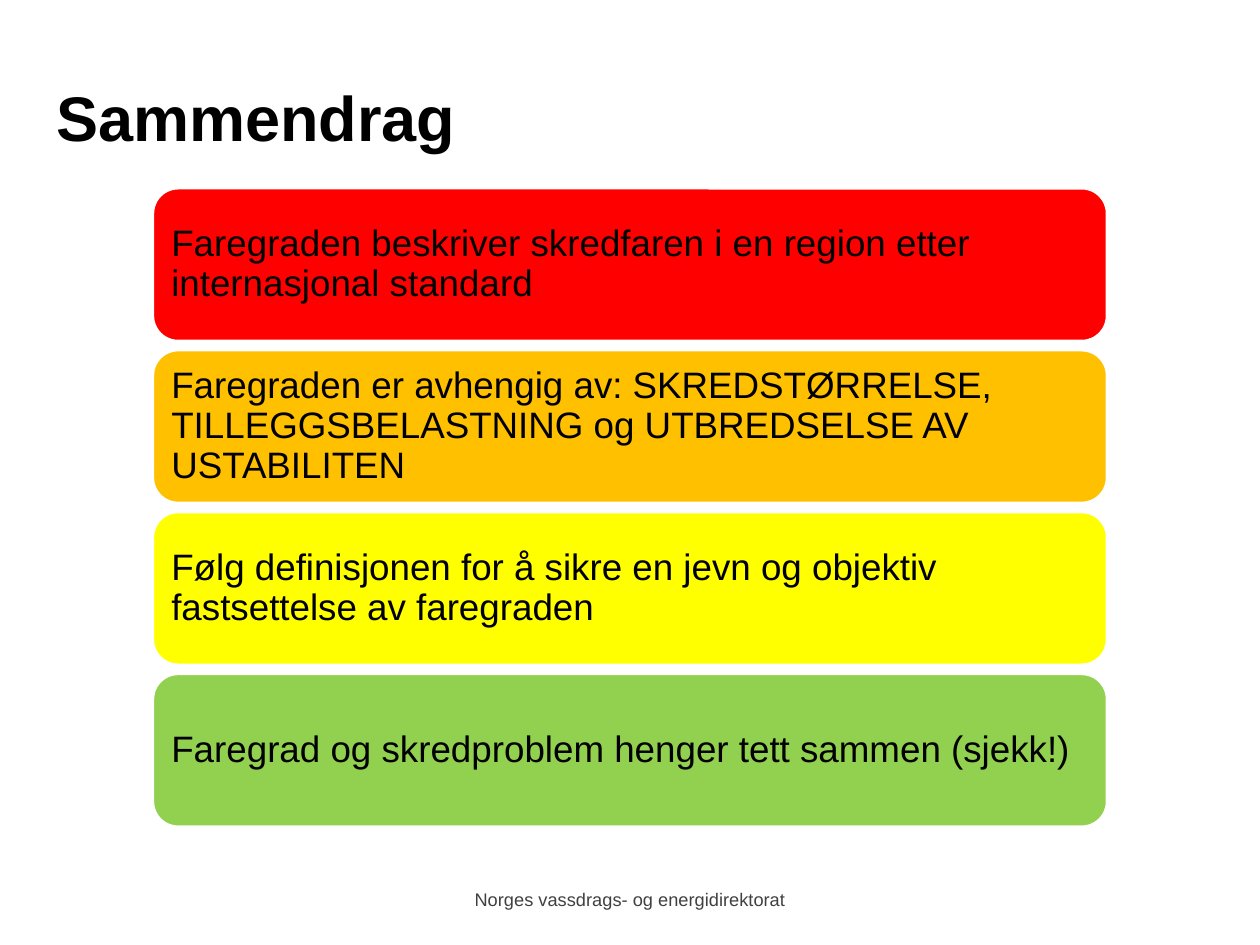
"""Build the summary slide with four stacked danger-level panels."""
from pptx import Presentation
from pptx.dml.color import RGBColor
from pptx.enum.shapes import MSO_SHAPE
from pptx.enum.text import MSO_ANCHOR, PP_ALIGN
from pptx.util import Inches, Pt

BLACK = RGBColor(0x00, 0x00, 0x00)
GREY = RGBColor(0x40, 0x40, 0x40)
WHITE = RGBColor(0xFF, 0xFF, 0xFF)
RED = RGBColor(0xFF, 0x00, 0x00)
ORANGE = RGBColor(0xFF, 0xC0, 0x00)
YELLOW = RGBColor(0xFF, 0xFF, 0x00)
GREEN = RGBColor(0x92, 0xD0, 0x50)

PANEL_LEFT, PANEL_TOP = 1.21, 1.49
PANEL_WIDTH, PANEL_HEIGHT = 7.58, 1.22
ROW_PITCH = 1.285
CORNER_SHARE = 0.167
PANEL_INSET = Inches(0.09)

PANELS = [
    (RED, "Faregraden beskriver skredfaren i en region etter internasjonal standard"),
    (ORANGE, "Faregraden er avhengig av: SKREDSTØRRELSE, TILLEGGSBELASTNING og UTBREDSELSE AV USTABILITEN"),
    (YELLOW, "Følg definisjonen for å sikre en jevn og objektiv fastsettelse av faregraden"),
    (GREEN, "Faregrad og skredproblem henger tett sammen (sjekk!)"),
]
PANEL_FRAME = {
    "word_wrap": True,
    "vertical_anchor": MSO_ANCHOR.MIDDLE,
    "margin_left": PANEL_INSET,
    "margin_right": PANEL_INSET,
    "margin_top": PANEL_INSET,
    "margin_bottom": PANEL_INSET,
}
PANEL_PARAGRAPH = {"alignment": PP_ALIGN.LEFT, "line_spacing": 0.9, "space_after": Pt(9)}


def apply_format(target, values):
    for name, value in values.items():
        setattr(target, name, value)


def write_text(shape, text, size, color, bold, frame_format, paragraph_format):
    apply_format(shape.text_frame, frame_format)
    paragraph = shape.text_frame.paragraphs[0]
    apply_format(paragraph, paragraph_format)
    run = paragraph.add_run()
    run.text = text
    apply_format(run.font, {"name": "Arial", "size": Pt(size), "bold": bold})
    run.font.color.rgb = color
    return run


presentation = Presentation()
presentation.slide_width, presentation.slide_height = Inches(10), Inches(7.5)
slide = presentation.slides.add_slide(presentation.slide_layouts[6])

footer = slide.shapes.add_textbox(Inches(2.5), Inches(6.97), Inches(5), Inches(0.3))
footer_run = write_text(
    footer, "Norges vassdrags- og energidirektorat", 18, GREY, False,
    {"word_wrap": True}, {"alignment": PP_ALIGN.CENTER, "space_after": Pt(6)},
)
footer_run.font._element.set("baseline", "30000")

title = slide.shapes.add_textbox(Inches(0.35), Inches(0.3), Inches(9.29), Inches(1.25))
write_text(
    title, "Sammendrag", 36, BLACK, True,
    {"word_wrap": True, "vertical_anchor": MSO_ANCHOR.MIDDLE}, {"alignment": PP_ALIGN.LEFT},
)

for row, (color, text) in enumerate(PANELS):
    panel = slide.shapes.add_shape(
        MSO_SHAPE.ROUNDED_RECTANGLE,
        Inches(PANEL_LEFT), Inches(PANEL_TOP + row * ROW_PITCH),
        Inches(PANEL_WIDTH), Inches(PANEL_HEIGHT),
    )
    panel.adjustments[0] = CORNER_SHARE
    panel.shadow.inherit = False
    panel.fill.solid()
    panel.fill.fore_color.rgb = color
    panel.line.color.rgb = WHITE
    panel.line.width = Pt(2)
    write_text(panel, text, 21, BLACK, False, PANEL_FRAME, PANEL_PARAGRAPH)

presentation.save("out.pptx")
